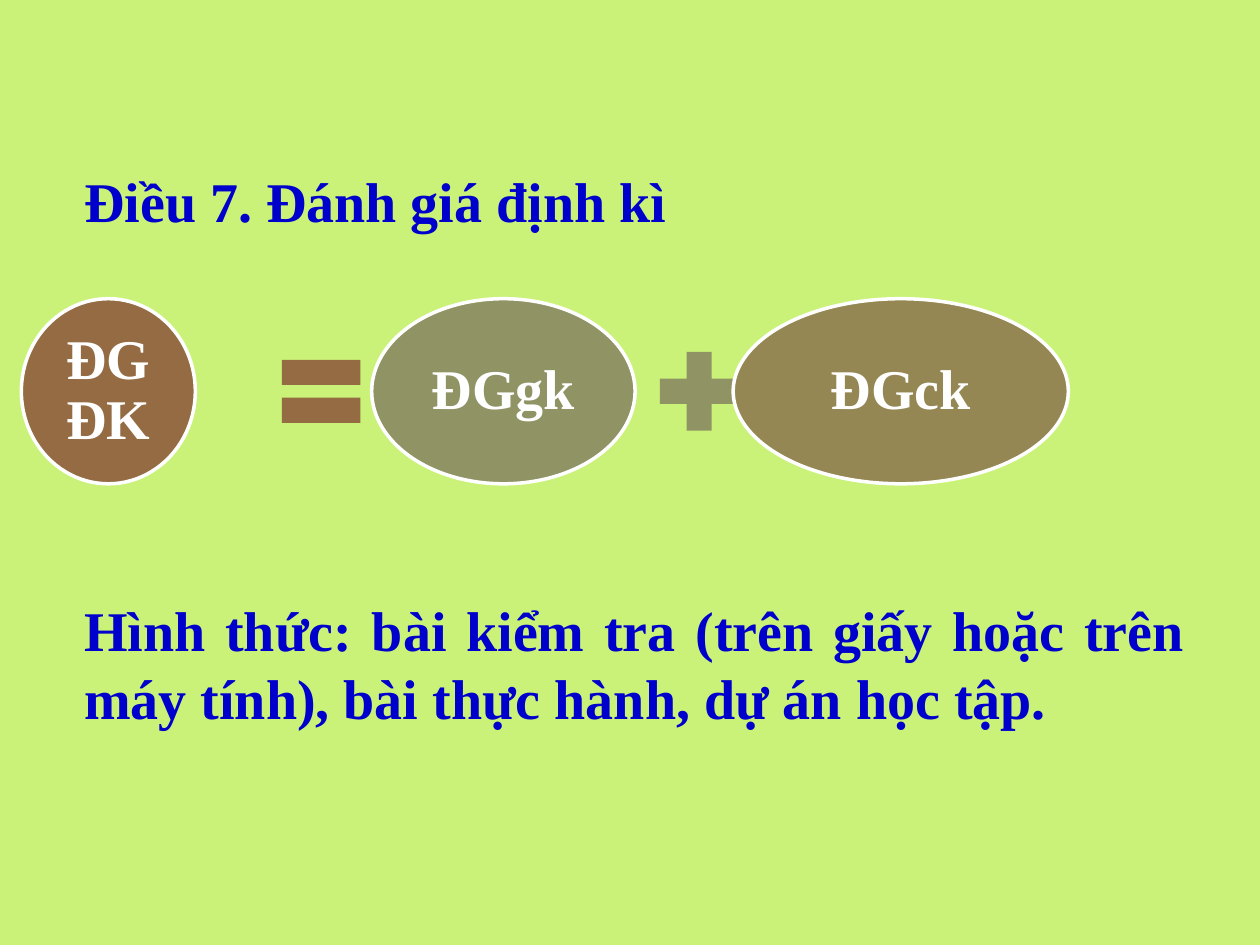
from dataclasses import dataclass

from pptx import Presentation
from pptx.dml.color import RGBColor
from pptx.enum.shapes import MSO_SHAPE as Preset
from pptx.enum.text import MSO_ANCHOR as Anchor, MSO_AUTO_SIZE as AutoSize, PP_ALIGN as Align
from pptx.shapes.autoshape import Shape
from pptx.slide import Slide
from pptx.text.text import TextFrame
from pptx.util import Pt

COLORS = {
    "background": "CAF278",
    "heading": "0000CC",
    "white": "FFFFFF",
    "brown": "956B43",
    "sage": "909465",
    "olive": "958753",
}
FONT, FONT_SIZE = "Times New Roman", 32
MIDLINE = 223.6  # shared vertical centre of the equation
TERM_HEIGHT = 105.8
SIGN_SIZE = 61.2
TEXT_LEFT = 41


@dataclass
class Term:
    label: str
    left: float
    width: float
    color: str


@dataclass
class Sign:
    preset: Preset
    left: float
    color: str


EQUATION = [
    Term("ĐGĐK", 12.2, 99.4, "brown"),
    Sign(Preset.MATH_EQUAL, 152.9, "brown"),
    Term("ĐGgk", 212.4, 150.5, "sage"),
    Sign(Preset.MATH_PLUS, 368.9, "sage"),
    Term("ĐGck", 419, 191.5, "olive"),
]


def rgb(name: str) -> RGBColor:
    return RGBColor.from_string(COLORS[name])


def write(frame: TextFrame, text: str, color: str, align: Align) -> None:
    frame.word_wrap = True
    frame.auto_size = AutoSize.NONE
    frame.text = text
    paragraph = frame.paragraphs[0]
    paragraph.alignment = align
    font = paragraph.font
    font.name, font.size, font.bold = FONT, Pt(FONT_SIZE), True
    font.color.rgb = rgb(color)


def add_filled(slide: Slide, preset: Preset, left: float, width: float,
               height: float, color: str) -> Shape:
    shape = slide.shapes.add_shape(
        preset, Pt(left), Pt(MIDLINE - height / 2), Pt(width), Pt(height))
    shape.shadow.inherit = False
    shape.fill.solid()
    shape.fill.fore_color.rgb = rgb(color)
    return shape


def draw_sign(slide: Slide, sign: Sign) -> None:
    shape = add_filled(slide, sign.preset, sign.left, SIGN_SIZE, SIGN_SIZE, sign.color)
    shape.line.fill.background()


def draw_term(slide: Slide, term: Term) -> None:
    oval = add_filled(slide, Preset.OVAL, term.left, term.width, TERM_HEIGHT, term.color)
    oval.line.color.rgb = rgb("white")
    oval.line.width = Pt(2)
    frame = oval.text_frame
    frame.margin_left = frame.margin_right = Pt(3)
    frame.margin_top = frame.margin_bottom = Pt(3)
    frame.vertical_anchor = Anchor.MIDDLE
    write(frame, term.label, "white", Align.CENTER)
    frame.paragraphs[0].line_spacing = 0.9


def main() -> None:
    deck = Presentation()
    deck.slide_width, deck.slide_height = Pt(720), Pt(540)
    slide = deck.slides.add_slide(deck.slide_layouts[5])
    slide.background.fill.solid()
    slide.background.fill.fore_color.rgb = rgb("background")

    # Heading
    title = slide.shapes.title
    title.left, title.top, title.width, title.height = Pt(TEXT_LEFT), Pt(91.4), Pt(535), Pt(46)
    title.text_frame.vertical_anchor = Anchor.TOP
    write(title.text_frame, "Điều 7. Đánh giá định kì", "heading", Align.JUSTIFY)

    # Equation, left to right
    for part in EQUATION:
        if isinstance(part, Term):
            draw_term(slide, part)
        else:
            draw_sign(slide, part)

    # Forms of assessment
    forms = slide.shapes.add_textbox(Pt(TEXT_LEFT), Pt(337), Pt(643.7), Pt(85))
    write(forms.text_frame,
          "Hình thức: bài kiểm tra (trên giấy hoặc trên máy tính), "
          "bài thực hành, dự án học tập.",
          "heading", Align.JUSTIFY)

    deck.save("out.pptx")


if __name__ == "__main__":
    main()
